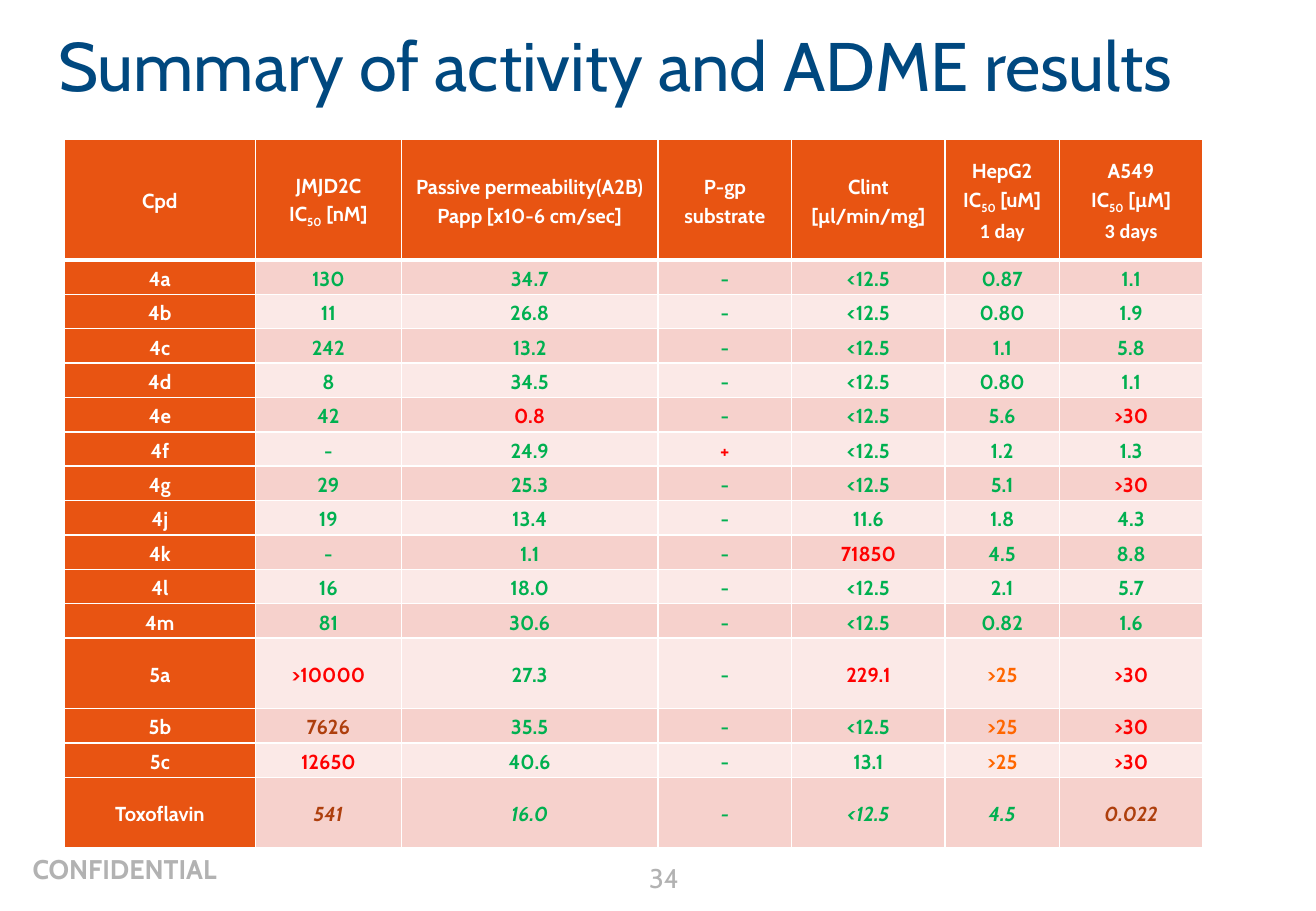
from lxml import etree
from pptx import Presentation
from pptx.dml.color import RGBColor
from pptx.enum.text import MSO_ANCHOR, PP_ALIGN
from pptx.oxml.ns import qn
from pptx.util import Inches, Pt

LEFT, CENTER = PP_ALIGN.LEFT, PP_ALIGN.CENTER
TOP, MIDDLE = MSO_ANCHOR.TOP, MSO_ANCHOR.MIDDLE
WHITE, ORANGE, NAVY, GREY = "FFFFFF", "E85412", "00487F", "B2B2B2"
BANDS = ("F6D1CC", "FBE9E7")
MARKS = {"": "00B050", "red": "FF0000", "amber": "FF6600", "brown": "AE3F0D"}

COLUMNS = (1.57, 1.2, 2.11, 1.1, 1.26, 0.94, 1.18)
HEADER_HEIGHT, TALL_HEIGHT = 0.99, 0.58
TALL_ROWS = ("5a", "Toxoflavin")
HEADERS = (
    "Cpd", "JMJD2C\nIC~50~ [nM]", "Passive permeability(A2B)\nPapp [x10-6 cm/sec]",
    "P-gp substrate", "Clint [µl/min/mg]", "HepG2\nIC~50~ [uM]\n1 day",
    "A549\nIC~50~ [µM]\n3 days",
)
RESULTS = """
4a, 130, 34.7, -, <12.5, 0.87, 1.1
4b, 11, 26.8, -, <12.5, 0.80, 1.9
4c, 242, 13.2, -, <12.5, 1.1, 5.8
4d, 8, 34.5, -, <12.5, 0.80, 1.1
4e, 42, 0.8 red, -, <12.5, 5.6, >30 red
4f, -, 24.9, + red, <12.5, 1.2, 1.3
4g, 29, 25.3, -, <12.5, 5.1, >30 red
4j, 19, 13.4, -, 11.6, 1.8, 4.3
4k, -, 1.1, -, 71850 red, 4.5, 8.8
4l, 16, 18.0, -, <12.5, 2.1, 5.7
4m, 81, 30.6, -, <12.5, 0.82, 1.6
5a, >10000 red, 27.3, -, 229.1 red, >25 amber, >30 red
5b, 7626 brown, 35.5, -, <12.5, >25 amber, >30 red
5c, 12650 red, 40.6, -, 13.1, >25 amber, >30 red
Toxoflavin, 541 brown, 16.0, -, <12.5, 4.5, 0.022 brown
"""


def rgb(value):
    """Turn a hex string into a colour."""
    return RGBColor.from_string(value)


def add_run(p, text, color, **formats):
    """Add one formatted run to a paragraph."""
    r = p.add_run()
    r.text = text
    for name, value in {"name": "Cabin", **formats}.items():
        setattr(r.font, name, value)
    r.font.color.rgb = rgb(color)
    return r


def add_label(s, box, text, color, size, bold=False, align=LEFT, anchor=TOP):
    """Place a single line of text in a box given in inches."""
    tf = s.shapes.add_textbox(*map(Inches, box)).text_frame
    tf.word_wrap, tf.vertical_anchor = True, anchor
    p = tf.paragraphs[0]
    p.alignment = align
    add_run(p, text, color, size=Pt(size), bold=bold)


def set_borders(cell, bottom):
    """Draw white cell borders with a given bottom width."""
    tc_pr = cell._tc.get_or_add_tcPr()
    for side, width in (("L", 1), ("R", 1), ("T", 1), ("B", bottom)):
        ln = etree.SubElement(tc_pr, qn(f"a:ln{side}"), w=str(Pt(width)))
        fill = etree.SubElement(ln, qn("a:solidFill"))
        etree.SubElement(fill, qn("a:srgbClr"), val=WHITE)


def fill_cell(cell, text, color, fill, italic=False, bottom=1):
    """Write and format a cell; tildes enclose subscripts."""
    set_borders(cell, bottom)
    cell.fill.solid()
    cell.fill.fore_color.rgb = rgb(fill)
    formats = {"vertical_anchor": MIDDLE, "margin_left": Inches(0.07),
               "margin_right": Inches(0.07), "margin_top": 0, "margin_bottom": 0}
    for name, value in formats.items():
        setattr(cell, name, value)
    tf = cell.text_frame
    for i, line in enumerate(text.split("\n")):
        p = tf.add_paragraph() if i else tf.paragraphs[0]
        p.alignment, p.line_spacing = CENTER, 1.15
        font = "Calibri" if i == 2 else "Cabin"
        for j, part in enumerate(line.split("~")):
            r = add_run(p, part, color, name=font, size=Pt(12), bold=True, italic=italic)
            if j % 2:
                r._r.get_or_add_rPr().set("baseline", "-25000")


def add_results(s, left, top, width, height):
    """Build the compound results table in the given box."""
    rows = [line.split(", ") for line in RESULTS.strip().splitlines()]
    table = s.shapes.add_table(len(rows) + 1, len(COLUMNS), *map(
        Inches, (left, top, width, height))).table
    for column, share in zip(table.columns, COLUMNS):
        column.width = Inches(width * share / sum(COLUMNS))
    spare = height - HEADER_HEIGHT - TALL_HEIGHT * len(TALL_ROWS)
    plain_height = spare / (len(rows) - len(TALL_ROWS))
    table.rows[0].height = Inches(HEADER_HEIGHT)
    for c, header in enumerate(HEADERS):
        fill_cell(table.cell(0, c), header, WHITE, ORANGE, bottom=3)
    for i, (compound, *values) in enumerate(rows):
        tall = compound in TALL_ROWS
        table.rows[i + 1].height = Inches(TALL_HEIGHT if tall else plain_height)
        fill_cell(table.cell(i + 1, 0), compound, WHITE, ORANGE)
        for c, value in enumerate(values, 1):
            text, _, mark = value.partition(" ")
            fill_cell(table.cell(i + 1, c), text, MARKS[mark], BANDS[i % 2],
                      italic=compound == "Toxoflavin")


def add_footer(s, top, height):
    """Place the confidentiality mark and the page number."""
    add_label(s, (0.17, top, 2.08, height), "CONFIDENTIAL", GREY, 16, bold=True)
    add_label(s, (5.2, top + 0.07, 0.53, height), "34", GREY, 16, align=CENTER)


def main():
    """Build and save the slide."""
    prs = Presentation()
    prs.slide_width, prs.slide_height = Inches(10.83), Inches(7.5)
    s = prs.slides.add_slide(prs.slide_layouts[6])
    add_footer(s, 6.97, 0.37)
    add_results(s, 0.53, 1.15, 9.37, 5.83)
    add_label(s, (0.38, -0.1, 10.24, 1.25), "Summary of activity and ADME results",
              NAVY, 40.7, anchor=MIDDLE)
    prs.save("out.pptx")


if __name__ == "__main__":
    main()
